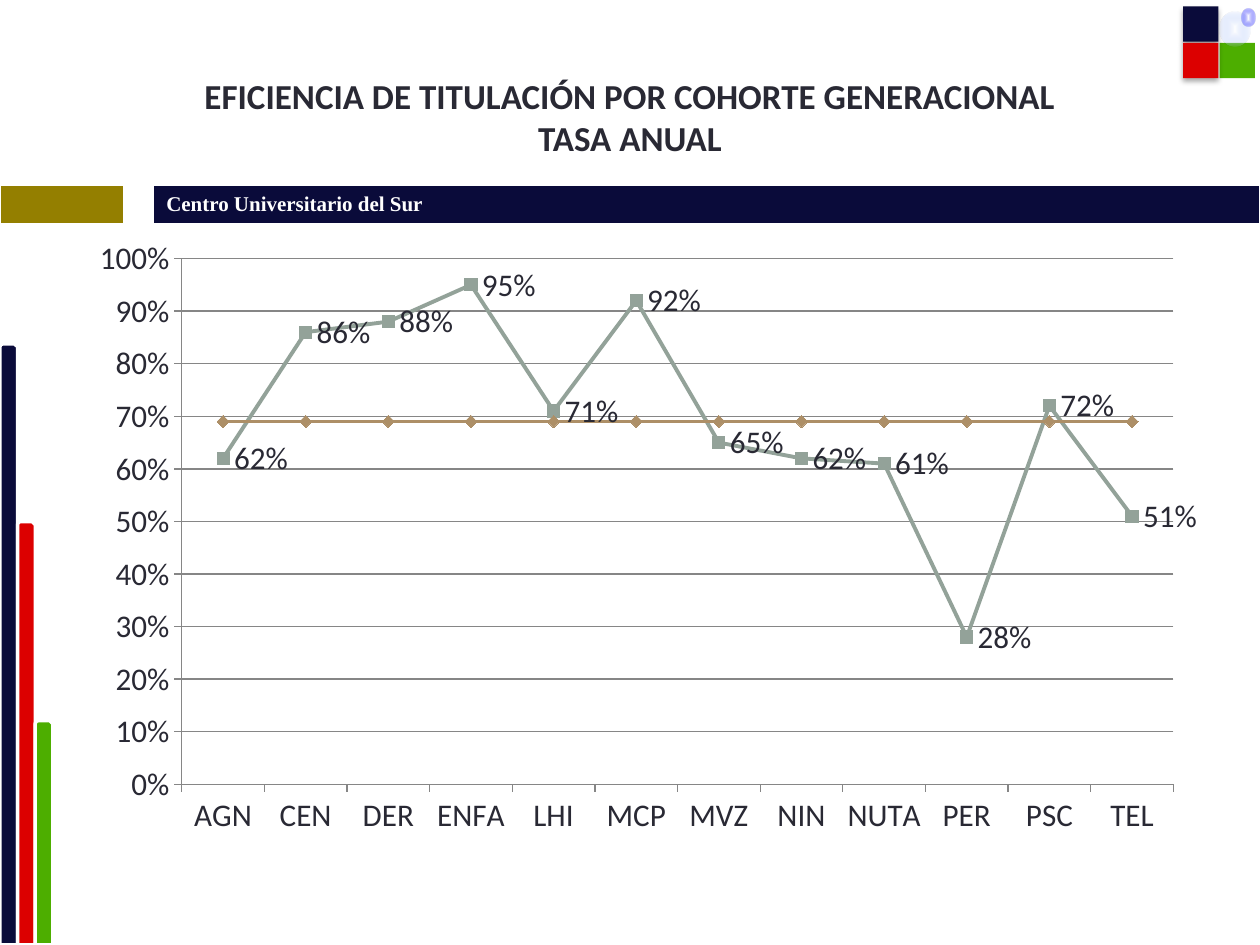
from lxml.etree import SubElement
from pptx import Presentation
from pptx.chart.data import CategoryChartData
from pptx.dml.color import RGBColor
from pptx.enum.chart import XL_CHART_TYPE, XL_LABEL_POSITION, XL_MARKER_STYLE, XL_TICK_MARK
from pptx.enum.shapes import MSO_SHAPE
from pptx.enum.text import MSO_ANCHOR, PP_ALIGN
from pptx.oxml import parse_xml
from pptx.oxml.ns import nsdecls, qn
from pptx.util import Inches, Pt

COLORS = {"navy": "0A0B3A", "red": "DC0000", "green": "4DAE00", "gold": "947F00",
          "white": "FFFFFF", "text": "292934", "rate": "93A299", "mean": "AD8F67",
          "sky": "A8C1FA", "blue": "0000FF", "grid": "868686"}
CODES = ["AGN", "CEN", "DER", "ENFA", "LHI", "MCP", "MVZ", "NIN", "NUTA", "PER", "PSC", "TEL"]
RATES = [0.62, 0.86, 0.88, 0.95, 0.71, 0.92, 0.65, 0.62, 0.61, 0.28, 0.72, 0.51]
MEAN = 0.69


def color(name):
    return RGBColor.from_string(COLORS[name])


def style(font, size, name, bold=False, face="Calibri"):
    font.size, font.bold, font.name = Pt(size), bold, face
    font.color.rgb = color(name)


def add_block(slide, kind, box, fill):
    shape = slide.shapes.add_shape(kind, *map(Inches, box))
    shape.shadow.inherit = False
    shape.fill.solid()
    shape.fill.fore_color.rgb = color(fill)
    shape.line.fill.background()
    return shape


def add_band(slide, left, top, width, height):
    frame = slide.shapes.add_table(1, 3, *map(Inches, (left, top, width, height)))
    table = frame.table
    table.horz_banding = False
    widths = [0.98, 0.24, width - 1.22]
    labels = ["", "", "Centro Universitario del Sur"]
    for col, size, cell, fill, label in zip(table.columns, widths, table.rows[0].cells,
                                            ["gold", None, "navy"], labels):
        col.width = Inches(size)
        cell.vertical_anchor = MSO_ANCHOR.MIDDLE
        if fill:
            cell.fill.solid()
            cell.fill.fore_color.rgb = color(fill)
        else:
            cell.fill.background()
        para = cell.text_frame.paragraphs[0]
        if label:
            para.text = label
            style(para.runs[0].font, 12, "white", True, "Times New Roman")
        else:
            SubElement(para._p, qn("a:endParaRPr"), sz="1200")


def add_bars(slide, left, bottom, width):
    """Stand the three bars side by side on one base line."""
    for i, (height, fill) in enumerate([(4.77, "navy"), (3.36, "red"), (1.78, "green")]):
        box = (left + i * width, bottom - height, width, height)
        bar = add_block(slide, MSO_SHAPE.SNIP_ROUND_RECTANGLE, box, fill)
        bar.line.color.rgb = color("white")
        bar.line.width = Pt(2)


def add_shade(shape):
    """Give a shape a soft shadow below it."""
    effects = shape._element.spPr.find(qn("a:effectLst"))
    shade = SubElement(effects, qn("a:outerShdw"), blurRad=str(Pt(3.1)), dist=str(Pt(1.8)),
                       dir="5400000", rotWithShape="0")
    tint = SubElement(shade, qn("a:srgbClr"), val="000000")
    SubElement(tint, qn("a:alpha"), val="35000")


def add_glow(shape, rim, alpha):
    """Fade a shape from a white centre to a clear rim."""
    props = shape._element.spPr
    props.replace(props.find(qn("a:solidFill")), parse_xml(
        f'<a:gradFill {nsdecls("a")} rotWithShape="1"><a:gsLst>'
        f'<a:gs pos="0"><a:srgbClr val="{COLORS["white"]}"/></a:gs>'
        f'<a:gs pos="100000"><a:srgbClr val="{COLORS[rim]}">'
        f'<a:alpha val="{alpha * 1000}"/></a:srgbClr></a:gs></a:gsLst>'
        '<a:path path="shape"><a:fillToRect l="50000" t="50000" r="50000" b="50000"/></a:path>'
        '</a:gradFill>'))


def add_corner(slide, left, top):
    side, step = 0.28, 0.29
    for col, row, fill in [(1, 1, "green"), (0, 0, "navy"), (0, 1, "red")]:
        box = (left + col * step, top + row * step, side, side)
        tile = add_block(slide, MSO_SHAPE.RECTANGLE, box, fill)
        if col == 0:
            add_shade(tile)
    for x, y, width, height, rim, alpha in [(0.29, 0.04, 0.24, 0.28, "sky", 10),
                                            (0.46, 0.02, 0.11, 0.14, "blue", 20)]:
        disc = add_block(slide, MSO_SHAPE.OVAL, (left + x, top + y, width, height), rim)
        add_glow(disc, rim, alpha)


def set_title(slide, left, top, width, height):
    title = slide.shapes.title
    title.left, title.top, title.width, title.height = map(Inches, (left, top, width, height))
    frame = title.text_frame
    frame.vertical_anchor = MSO_ANCHOR.MIDDLE
    frame.word_wrap = True
    para = frame.paragraphs[0]
    para.text = "EFICIENCIA DE TITULACIÓN POR COHORTE GENERACIONAL\vTASA ANUAL"
    para.alignment = PP_ALIGN.CENTER
    for run in para.runs:
        style(run.font, 20, "text", True)


def set_plot(chart, **place):
    """Fix the inner plot area as fractions of the chart."""
    area = chart._chartSpace.chart.plotArea
    for old in area.findall(qn("c:layout")):
        area.remove(old)
    modes = '<c:xMode val="edge"/><c:yMode val="edge"/>'
    sizes = "".join(f'<c:{key} val="{value}"/>' for key, value in place.items())
    area.insert(0, parse_xml(
        f'<c:layout {nsdecls("c")}><c:manualLayout><c:layoutTarget val="inner"/>'
        f'{modes}{sizes}</c:manualLayout></c:layout>'))


def add_lines(slide, left, top, width, height):
    data = CategoryChartData(number_format="0%")
    data.categories = CODES
    data.add_series("Series 1", RATES)
    data.add_series("Series 2", [MEAN] * len(CODES))
    box = map(Inches, (left, top, width, height))
    chart = slide.shapes.add_chart(XL_CHART_TYPE.LINE_MARKERS, *box, data).chart
    chart.has_legend = chart.has_title = False
    style(chart.font, 18, "text")
    set_plot(chart, x=0.106, y=0.039, w=0.885, h=0.843)

    axis = chart.value_axis
    axis.minimum_scale, axis.maximum_scale, axis.major_unit = 0, 1, 0.1
    axis.tick_labels.number_format = "0%"
    axis.tick_labels.number_format_is_linked = False
    axis.has_major_gridlines = True
    for part in (axis, chart.category_axis):
        part.major_tick_mark = XL_TICK_MARK.OUTSIDE
    for item in (axis, chart.category_axis, axis.major_gridlines):
        item.format.line.color.rgb = color("grid")
        item.format.line.width = Pt(0.75)

    looks = [("rate", XL_MARKER_STYLE.SQUARE, 7), ("mean", XL_MARKER_STYLE.DIAMOND, 7)]
    for series, (name, mark, size) in zip(chart.plots[0].series, looks):
        series.smooth = False
        series.format.line.color.rgb = color(name)
        series.format.line.width = Pt(2.25)
        series.marker.style, series.marker.size = mark, size
        series.marker.format.fill.solid()
        series.marker.format.fill.fore_color.rgb = color(name)
        series.marker.format.line.color.rgb = color(name)

    labels = chart.plots[0].series[0].data_labels
    labels.show_value = True
    labels.number_format = "0%"
    labels.number_format_is_linked = False
    labels.position = XL_LABEL_POSITION.RIGHT
    style(labels.font, 18, "text")


def main():
    deck = Presentation()
    deck.slide_width, deck.slide_height = Inches(10), Inches(7.5)
    slide = deck.slides.add_slide(deck.slide_layouts[5])
    add_band(slide, 0, 1.47, 10, 0.29)
    add_bars(slide, 0, 7.5, 0.14)
    add_corner(slide, 9.39, 0.05)
    set_title(slide, 0.5, 0.3, 9, 1.25)
    add_lines(slide, 0.5, 1.86, 9, 4.95)
    deck.save("out.pptx")


if __name__ == "__main__":
    main()
